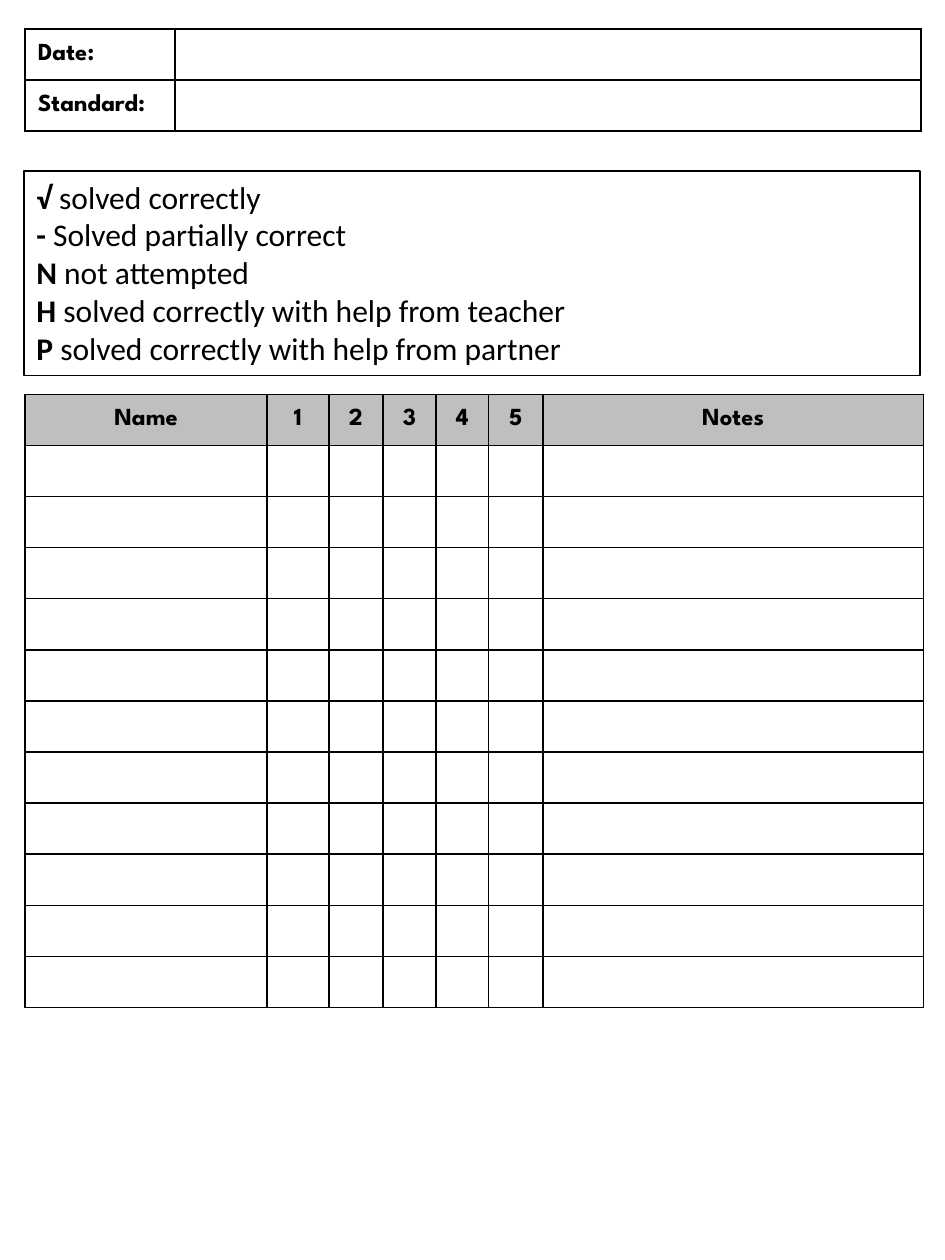
from dataclasses import dataclass

from lxml import etree
from pptx import Presentation
from pptx.dml.color import RGBColor
from pptx.enum import shapes, text
from pptx.oxml import ns
from pptx.util import Inches, Pt

BLACK, WHITE, GREY = "000000", "FFFFFF", "BFBFBF"


@dataclass
class Grid:
    left: float
    top: float
    height: float
    widths: list[float]
    rows: list[list[str]]
    fills: list[str | None]
    align: text.PP_ALIGN


@dataclass
class Mark:
    sign: str
    meaning: str


def paint(target, color: str) -> None:
    target.rgb = RGBColor.from_string(color)


def style(font, name: str, size: int) -> None:
    font.name = name
    font.size = Pt(size)
    paint(font.color, BLACK)


def border(cell) -> None:
    props = cell._tc.get_or_add_tcPr()
    for spot, side in enumerate(("lnL", "lnR", "lnT", "lnB")):
        line = etree.Element(ns.qn(f"a:{side}"), w=str(Pt(1)))
        fill = etree.SubElement(line, ns.qn("a:solidFill"))
        etree.SubElement(fill, ns.qn("a:srgbClr"), val=BLACK)
        props.insert(spot, line)


def draw_grid(slide, grid: Grid) -> None:
    frame = slide.shapes.add_table(
        len(grid.rows), len(grid.widths), Inches(grid.left), Inches(grid.top),
        Inches(sum(grid.widths)), Inches(grid.height))
    table = frame.table
    table.first_row = table.horz_banding = False
    for col, width in zip(table.columns, grid.widths):
        col.width = Inches(width)
    for row, words, fill in zip(table.rows, grid.rows, grid.fills):
        row.height = Inches(grid.height / len(grid.rows))
        for cell, word in zip(row.cells, words):
            cell.text = word
            cell.vertical_anchor = text.MSO_ANCHOR.MIDDLE
            para = cell.text_frame.paragraphs[0]
            para.alignment = grid.align
            style(para.font, "League Spartan", 14)
            para.font.bold = True
            if fill:
                cell.fill.solid()
                paint(cell.fill.fore_color, fill)
            else:
                cell.fill.background()
            border(cell)


def draw_key(slide, marks: list[Mark]) -> None:
    box = slide.shapes.add_shape(
        shapes.MSO_SHAPE.RECTANGLE,
        Inches(0.19), Inches(1.36), Inches(7.11), Inches(1.62))
    box.shadow.inherit = False
    box.fill.background()
    paint(box.line.color, BLACK)
    box.line.width = Pt(1)
    frame = box.text_frame
    frame.word_wrap = True
    frame.auto_size = text.MSO_AUTO_SIZE.SHAPE_TO_FIT_TEXT
    frame.vertical_anchor = text.MSO_ANCHOR.TOP
    for spot, mark in enumerate(marks):
        para = frame.add_paragraph() if spot else frame.paragraphs[0]
        para.alignment = text.PP_ALIGN.LEFT
        style(para.font, "Calibri", 18)
        for words, bold in ((f"{mark.sign} ", True), (mark.meaning, False)):
            run = para.add_run()
            run.text = words
            run.font.bold = bold


def main() -> None:
    deck = Presentation()
    deck.slide_width, deck.slide_height = Inches(7.5), Inches(10)
    slide = deck.slides.add_slide(deck.slide_layouts[6])

    draw_grid(slide, Grid(
        0.2, 0.23, 0.81, [1.19, 5.92],
        [["Date:", ""], ["Standard:", ""]],
        [WHITE, WHITE], text.PP_ALIGN.LEFT))

    heads = ["Name", "1", "2", "3", "4", "5", "Notes"]
    pupils = 11
    draw_grid(slide, Grid(
        0.2, 3.13, 4.87, [1.92, 0.49, 0.43, 0.42, 0.42, 0.43, 3.02],
        [heads] + [[""] * len(heads)] * pupils,
        [GREY] + [None] * pupils, text.PP_ALIGN.CENTER))

    draw_key(slide, [
        Mark("√", "solved correctly"),
        Mark("-", "Solved partially correct"),
        Mark("N", "not attempted"),
        Mark("H", "solved correctly with help from teacher"),
        Mark("P", "solved correctly with help from partner"),
    ])
    deck.save("out.pptx")


if __name__ == "__main__":
    main()
